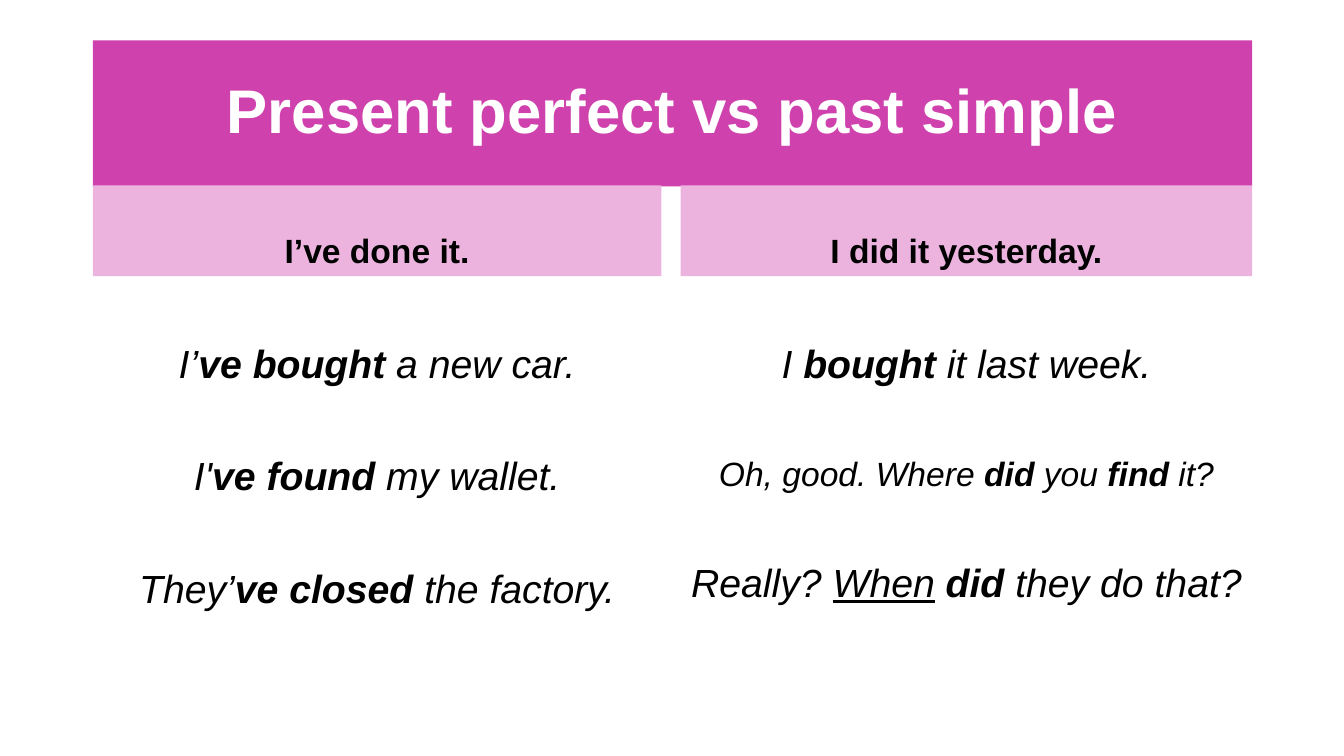
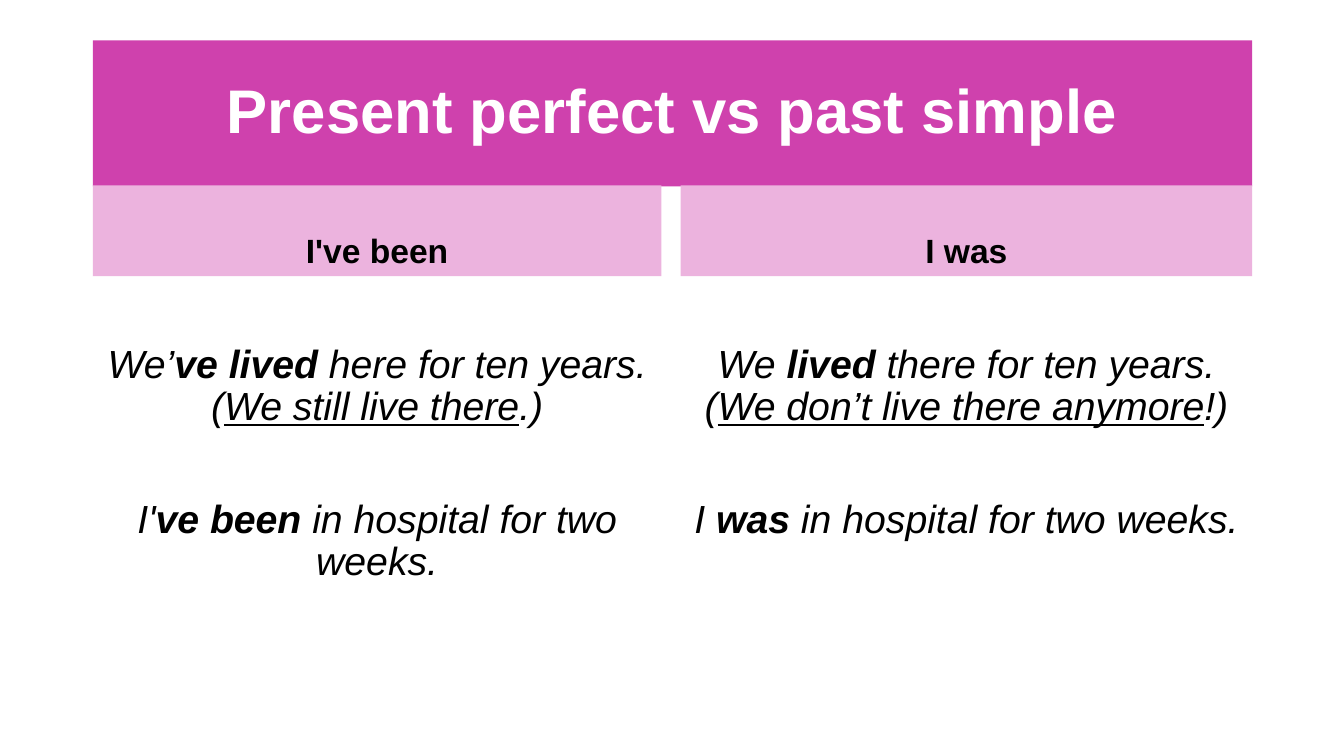
"""Build two slides comparing the present perfect with the past simple."""
import pptx
import pptx.dml.color
import pptx.enum.text
import pptx.util
import lxml.etree

Inches, Pt = pptx.util.Inches, pptx.util.Pt
ANCHOR = pptx.enum.text.MSO_ANCHOR
COLORS = {"title": "CF41AD", "header": "ECB3DE", "white": "FFFFFF", "black": "000000"}
TITLE = "Present perfect vs past simple"
COLUMNS = [(0.92, 5.64), (6.75, 5.67)]
TITLE_FONT = {"size": Pt(44), "bold": True}
HEADER_FONT = {"size": Pt(24), "bold": True}
SENTENCE_GAP = Pt(50)

SLIDES = [
    [
        ("I’ve done it.", [
            (28, [("I’", ""), ("ve bought ", "b"), ("a new car.", "")]),
            (28, [("I'", ""), ("ve found ", "b"), ("my wallet.", "")]),
            (28, [("They’", ""), ("ve closed ", "b"), ("the factory.", "")]),
        ]),
        ("I did it yesterday.", [
            (28, [("I ", ""), ("bought", "b"), (" it last week.", "")]),
            (24, [("Oh, good. Where ", ""), ("did", "b"), (" you ", ""),
                  ("find", "b"), (" it?", "")]),
            (28, [("Really? ", ""), ("When", "u"), (" ", ""), ("did", "b"),
                  (" they do that?", "")]),
        ]),
    ],
    [
        ("I've been", [
            (28, [("We’", ""), ("ve lived ", "b"), ("here for ten years. (", ""),
                  ("We still live there", "u"), (".)", "")]),
            (28, [("I'", ""), ("ve been ", "b"), ("in hospital for two weeks.", "")]),
        ]),
        ("I was", [
            (28, [("We ", ""), ("lived", "b"), (" there for ten years. (", ""),
                  ("We don’t live there anymore", "u"), ("!)", "")]),
            (28, [("I ", ""), ("was", "b"), (" in hospital for two weeks.", "")]),
        ]),
    ],
]


def place(sp, box, anchor, fill=None):
    """Position a placeholder, set its fill and return its text frame."""
    sp.left, sp.top, sp.width, sp.height = [Inches(v) for v in box]
    if fill:
        sp.fill.solid()
        sp.fill.fore_color.rgb = pptx.dml.color.RGBColor.from_string(COLORS[fill])
    tf = sp.text_frame
    tf.word_wrap = True
    tf.auto_size = pptx.enum.text.MSO_AUTO_SIZE.NONE
    tf.vertical_anchor = anchor
    return tf


def write(p, runs, color, space_before=Pt(0)):
    """Fill a centred, unbulleted paragraph with (text, font format) runs."""
    pPr = p._p.get_or_add_pPr()
    pPr.set("marL", "0")
    pPr.set("indent", "0")
    lxml.etree.SubElement(pPr, pptx.oxml.ns.qn("a:buNone"))
    p.alignment = pptx.enum.text.PP_ALIGN.CENTER
    p.line_spacing = 0.9
    p.space_before = space_before
    for text, fmt in runs:
        r = p.add_run()
        r.text = text
        for name, value in {"name": "Arial", **fmt}.items():
            setattr(r.font, name, value)
        r.font.color.rgb = pptx.dml.color.RGBColor.from_string(COLORS[color])


prs = pptx.Presentation()
prs.slide_width, prs.slide_height = Inches(13.33), Inches(7.5)
comparison = prs.slide_layouts.get_by_name("Comparison")

for columns in SLIDES:
    s = prs.slides.add_slide(comparison)
    tf = place(s.shapes.title, (0.92, 0.4, 11.5, 1.45), ANCHOR.MIDDLE, "title")
    write(tf.paragraphs[0], [(TITLE, TITLE_FONT)], "white")

    for i, ((left, width), (header, sentences)) in enumerate(zip(COLUMNS, columns)):
        head, body = [s.placeholders[2 * i + n] for n in (1, 2)]
        tf = place(head, (left, 1.84, width, 0.9), ANCHOR.BOTTOM, "header")
        write(tf.paragraphs[0], [(header, HEADER_FONT)], "black")

        tf = place(body, (left, 2.74, width, 4.03), ANCHOR.TOP)
        tf.margin_top = Inches(0.68)
        for n, (size, runs) in enumerate(sentences):
            p = tf.add_paragraph() if n else tf.paragraphs[0]
            styled = [(text, {"size": Pt(size), "italic": True,
                              "bold": style == "b", "underline": style == "u"})
                      for text, style in runs]
            write(p, styled, "black", SENTENCE_GAP if n else Pt(0))

prs.save("out.pptx")
